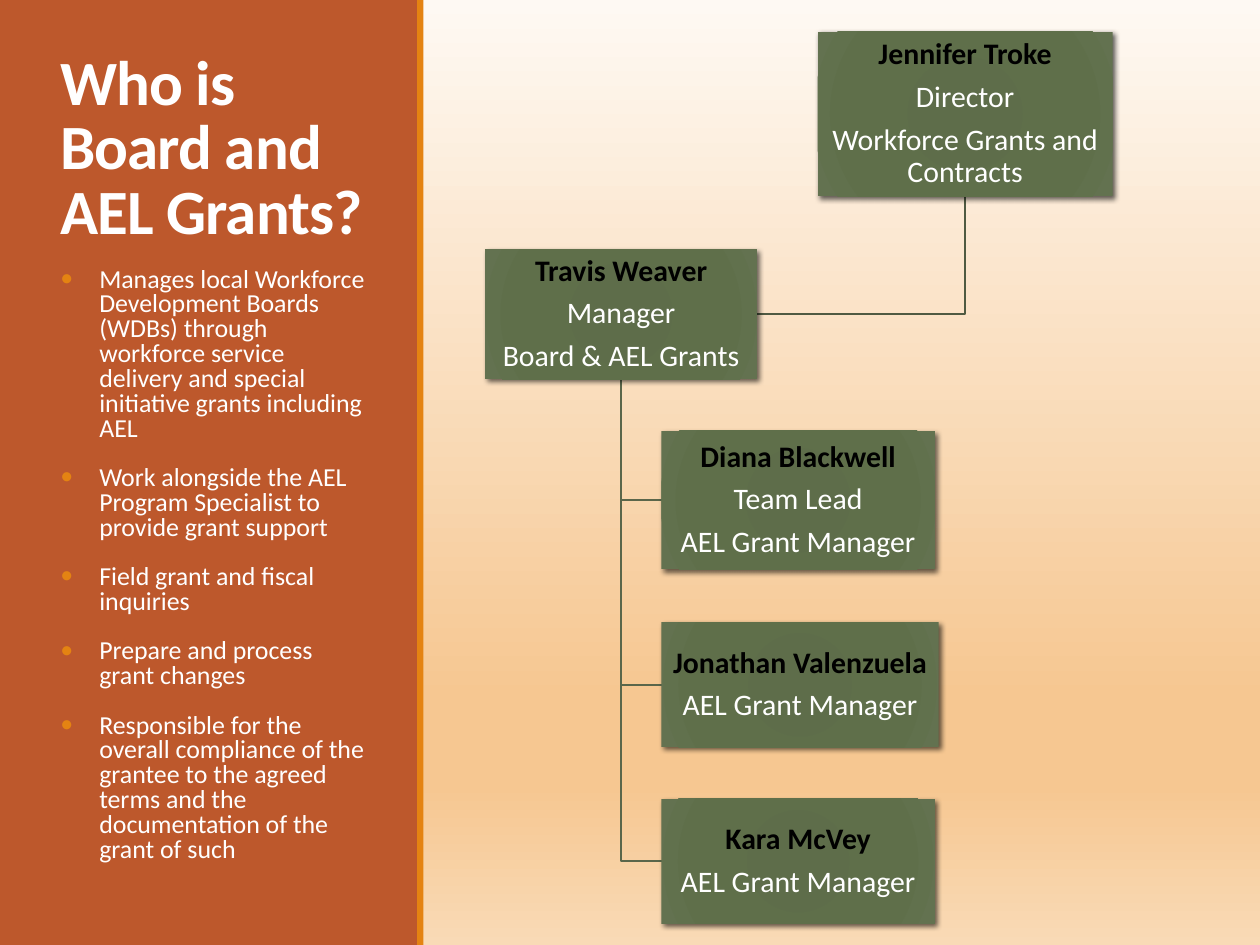
from lxml.etree import SubElement
from pptx import Presentation
from pptx.dml.color import RGBColor
from pptx.enum.shapes import MSO_SHAPE
from pptx.enum.text import MSO_ANCHOR, PP_ALIGN
from pptx.oxml.ns import qn
from pptx.util import Emu, Inches, Pt

RUST = RGBColor(0xBD, 0x58, 0x2C)
ORANGE = RGBColor(0xE4, 0x83, 0x12)
WHITE = RGBColor(0xFF, 0xFF, 0xFF)
BLACK = RGBColor(0, 0, 0)
RAIL_GREEN = RGBColor(0x5A, 0x66, 0x4A)
LINK_GREEN = RGBColor(0x4F, 0x5A, 0x42)
SKY_STOPS = [(0, "FEF9F3"), (74, "F6C791"), (83, "F6C791"), (100, "F9DAB6")]
BOX_STOPS = [(0, "5D6D48"), (34, "5E6D4A"), (70, "5F6F4A"), (100, "637250")]
FONT = "Calibri"

TITLE = "Who is Board and AEL Grants?"
DUTIES = [
    "Manages local Workforce Development Boards (WDBs) through workforce service "
    "delivery and special initiative grants including AEL",
    "Work alongside the AEL Program Specialist to provide grant support",
    "Field grant and fiscal inquiries",
    "Prepare and process grant changes",
    "Responsible for the overall compliance of the grantee to the agreed terms "
    "and the documentation of the grant of such",
]
# (left, top, width, height), lines of text with the name first
DIRECTOR = ((6.49, 0.25, 2.34, 1.31),
            ["Jennifer Troke", "Director", "Workforce Grants and Contracts"])
MANAGER = ((3.85, 1.98, 2.16, 1.03),
           ["Travis Weaver", "Manager", "Board & AEL Grants"])
TEAM = [
    ((5.25, 3.42, 2.17, 1.1), ["Diana Blackwell", "Team Lead", "AEL Grant Manager"]),
    ((5.25, 4.94, 2.2, 0.99), ["Jonathan Valenzuela", "AEL Grant Manager"]),
    ((5.25, 6.34, 2.17, 0.99), ["Kara McVey", "AEL Grant Manager"]),
]


def add(parent, tag, **attrs):
    return SubElement(parent, qn(tag), {k: str(v) for k, v in attrs.items()})


def set_gradient(fill, owner, stops, radial=False):
    """Fill with the given stops, top to bottom or radially."""
    fill.gradient()
    grad = owner.find(".//" + qn("a:gradFill"))
    for child in list(grad):
        grad.remove(child)
    stop_list = add(grad, "a:gsLst")
    for pos, color in stops:
        add(add(stop_list, "a:gs", pos=pos * 1000), "a:srgbClr", val=color)
    if radial:
        path = add(grad, "a:path", path="circle")
        add(path, "a:fillToRect", **dict.fromkeys("ltrb", 100000))
    else:
        add(grad, "a:lin", ang=90 * 60000, scaled=0)


def add_rect(s, at):
    sp = s.shapes.add_shape(MSO_SHAPE.RECTANGLE, *map(Inches, at))
    sp.shadow.inherit = False
    sp.line.fill.background()
    return sp


def write(p, text, size, color, bold=False, **paragraph_format):
    for name, value in paragraph_format.items():
        setattr(p, name, value)
    r = p.add_run()
    r.text = text
    r.font.name, r.font.size, r.font.bold = FONT, Pt(size), bold
    r.font.color.rgb = color
    return r


def paragraphs(tf, count):
    return [tf.paragraphs[0]] + [tf.add_paragraph() for _ in range(count - 1)]


def add_person(s, at, lines):
    sp = add_rect(s, at)
    set_gradient(sp.fill, sp._element, BOX_STOPS, radial=True)
    shadow = add(sp._element.spPr.find(qn("a:effectLst")), "a:outerShdw",
                 blurRad=Pt(3), dist=Pt(2), dir=45 * 60000, algn="ctr", rotWithShape=0)
    add(add(shadow, "a:srgbClr", val="000000"), "a:alpha", val=60000)
    tf = sp.text_frame
    tf.word_wrap = True
    tf.vertical_anchor = MSO_ANCHOR.MIDDLE
    for side in ("left", "top", "right", "bottom"):
        setattr(tf, "margin_" + side, Inches(0.01))
    for i, (p, text) in enumerate(zip(paragraphs(tf, len(lines)), lines)):
        write(p, text, 17, WHITE if i else BLACK, bold=i == 0,
              alignment=PP_ALIGN.CENTER, line_spacing=0.9, space_after=Pt(6))


def add_link(s, points, color):
    start, *rest = [tuple(map(Inches, pt)) for pt in points]
    builder = s.shapes.build_freeform(*start)
    builder.add_line_segments(rest, close=False)
    sp = builder.convert_to_shape()
    sp.fill.background()
    sp.line.color.rgb = color
    sp.line.width = Pt(1.25)
    sp.shadow.inherit = False


def add_text_frame(s, at):
    tf = s.shapes.add_textbox(*map(Inches, at)).text_frame
    tf.word_wrap = True
    return tf


def add_bullet(p, color):
    p_pr = p._p.get_or_add_pPr()
    p_pr.set("marL", str(Inches(0.31)))
    p_pr.set("indent", str(Emu(-Inches(0.31))))
    add(add(p_pr, "a:buClr"), "a:srgbClr", val=color)
    add(p_pr, "a:buFont", typeface=FONT)
    add(p_pr, "a:buChar", char="•")


def main():
    prs = Presentation()
    prs.slide_width, prs.slide_height = Inches(10), Inches(7.5)
    s = prs.slides.add_slide(prs.slide_layouts[6])
    set_gradient(s.background.fill, s._element, SKY_STOPS)

    for at, color in (((0, 0, 3.32, 7.5), RUST), ((3.31, 0, 0.05, 7.5), ORANGE)):
        panel = add_rect(s, at)
        panel.fill.solid()
        panel.fill.fore_color.rgb = color

    tf = add_text_frame(s, (0.38, 0.26, 2.62, 1.75))
    tf.vertical_anchor = MSO_ANCHOR.BOTTOM
    r = write(tf.paragraphs[0], TITLE, 36, WHITE, bold=True, line_spacing=0.85)
    r.font._element.set("spc", "-50")

    left, top, width, height = MANAGER[0]
    rail_x, rail_top = left + width / 2, top + height
    for (x, y, _, h), _ in reversed(TEAM):
        mid = y + h / 2
        add_link(s, [(rail_x, rail_top), (rail_x, mid), (x, mid)], RAIL_GREEN)
    x, y, w, h = DIRECTOR[0]
    mid = top + height / 2
    add_link(s, [(x + w / 2, y + h), (x + w / 2, mid), (left + width, mid)], LINK_GREEN)

    for at, lines in [DIRECTOR, MANAGER, *TEAM]:
        add_person(s, at, lines)

    tf = add_text_frame(s, (0.38, 2.08, 2.62, 5.17))
    for p, text in zip(paragraphs(tf, len(DUTIES)), DUTIES):
        write(p, text, 14.8, WHITE, line_spacing=0.8,
              space_before=Pt(12), space_after=Pt(2))
        add_bullet(p, ORANGE)

    prs.save("out.pptx")


if __name__ == "__main__":
    main()
